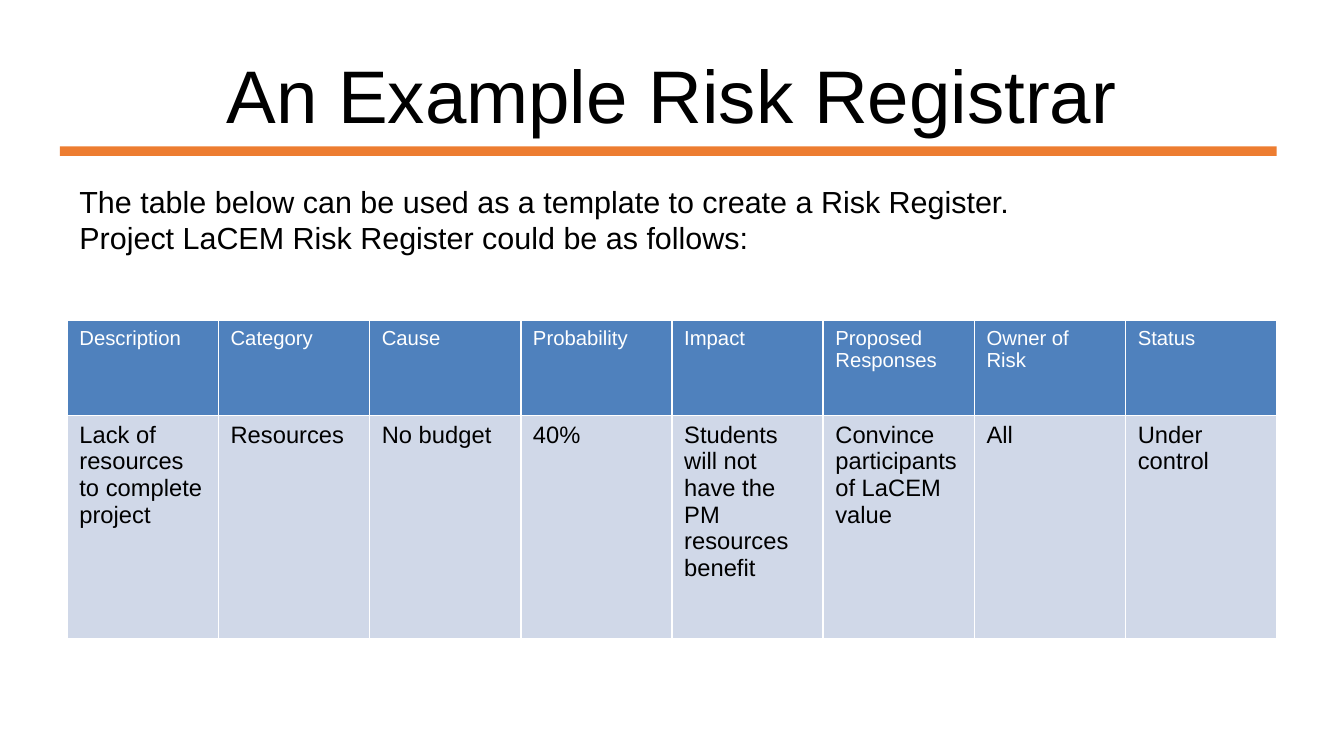
"""Build the risk register example slide."""
from lxml import etree
from pptx import Presentation
from pptx import util as u
from pptx.dml.color import RGBColor
from pptx.enum import shapes, text
from pptx.oxml import ns

TITLE = "An Example Risk Registrar"
INTRO = [
    "The table below can be used as a template to create a Risk Register.",
    "Project LaCEM Risk Register could be as follows:",
]
REGISTER = [
    ("Description", "Lack of resources to complete project"),
    ("Category", "Resources"),
    ("Cause", "No budget"),
    ("Probability", "40%"),
    ("Impact", "Students will not have the PM resources benefit"),
    ("Proposed Responses", "Convince participants of LaCEM value"),
    ("Owner of Risk", "All"),
    ("Status", "Under control"),
]
COLORS = {
    "black": "000000",
    "white": "FFFFFF",
    "rule": "ED7D31",
    "header": "4F81BD",
    "body": "D0D8E8",
}
ROWS = [
    {"height": u.Cm(1.98), "fill": "header", "size": 12, "color": "white"},
    {"height": u.Cm(4.65), "fill": "body", "size": 14, "color": "black"},
]
FONT = "Arial"
LEFT, WIDTH = u.Cm(1.4), u.Cm(25.2)


def color(name):
    return RGBColor.from_string(COLORS[name])


def write(frame, lines, size, color_name="black", align=text.PP_ALIGN.LEFT):
    for index, line in enumerate(lines):
        paragraph = frame.add_paragraph() if index else frame.paragraphs[0]
        paragraph.alignment = align
        paragraph.space_before = u.Pt(0)
        run = paragraph.add_run()
        run.text = line
        run.font.name = FONT
        run.font.size = u.Pt(size)
        run.font.bold = False
        run.font.color.rgb = color(color_name)


def place(shape, top, height):
    shape.left, shape.top, shape.width, shape.height = LEFT, top, WIDTH, height


def remove_bullets(frame):
    for paragraph in frame.paragraphs:
        properties = paragraph._p.get_or_add_pPr()
        properties.set("marL", "0")
        properties.set("indent", "0")
        etree.SubElement(properties, ns.qn("a:buNone"))


def outline_cell(cell):
    properties = cell._tc.get_or_add_tcPr()
    for position, side in enumerate(("lnL", "lnR", "lnT", "lnB")):
        line = etree.Element(ns.qn(f"a:{side}"), w=str(u.Pt(1)))
        fill = etree.SubElement(line, ns.qn("a:solidFill"))
        etree.SubElement(fill, ns.qn("a:srgbClr"), val=COLORS["white"])
        properties.insert(position, line)


def add_register(slide):
    height = sum(row["height"] for row in ROWS)
    frame = slide.shapes.add_table(
        len(ROWS), len(REGISTER), LEFT, u.Cm(6.68), WIDTH, height)
    table = frame.table
    for column in table.columns:
        column.width = WIDTH // len(REGISTER)
    for row_index, row in enumerate(ROWS):
        table.rows[row_index].height = row["height"]
        for column_index, entry in enumerate(REGISTER):
            cell = table.cell(row_index, column_index)
            cell.fill.solid()
            cell.fill.fore_color.rgb = color(row["fill"])
            outline_cell(cell)
            write(cell.text_frame, [entry[row_index]],
                  size=row["size"], color_name=row["color"])


def main():
    presentation = Presentation()
    presentation.slide_width, presentation.slide_height = u.Cm(28), u.Cm(15.75)
    slide = presentation.slides.add_slide(presentation.slide_layouts[1])

    title, intro = slide.placeholders
    place(title, u.Cm(0.64), u.Cm(2.62))
    frame = title.text_frame
    frame.auto_size = text.MSO_AUTO_SIZE.NONE
    frame.vertical_anchor = text.MSO_ANCHOR.MIDDLE
    frame.margin_left = frame.margin_right = 0
    frame.margin_top = frame.margin_bottom = 0
    write(frame, [TITLE], size=44, align=text.PP_ALIGN.CENTER)

    rule = slide.shapes.add_shape(
        shapes.MSO_SHAPE.RECTANGLE, u.Cm(1.25), u.Cm(3.05), u.Cm(25.35), u.Cm(0.2))
    rule.shadow.inherit = False
    rule.fill.solid()
    rule.fill.fore_color.rgb = color("rule")
    rule.line.fill.background()

    place(intro, u.Cm(3.68), u.Cm(3.33))
    intro.text_frame.auto_size = text.MSO_AUTO_SIZE.NONE
    write(intro.text_frame, INTRO, size=18)
    remove_bullets(intro.text_frame)

    add_register(slide)
    presentation.save("out.pptx")


if __name__ == "__main__":
    main()
